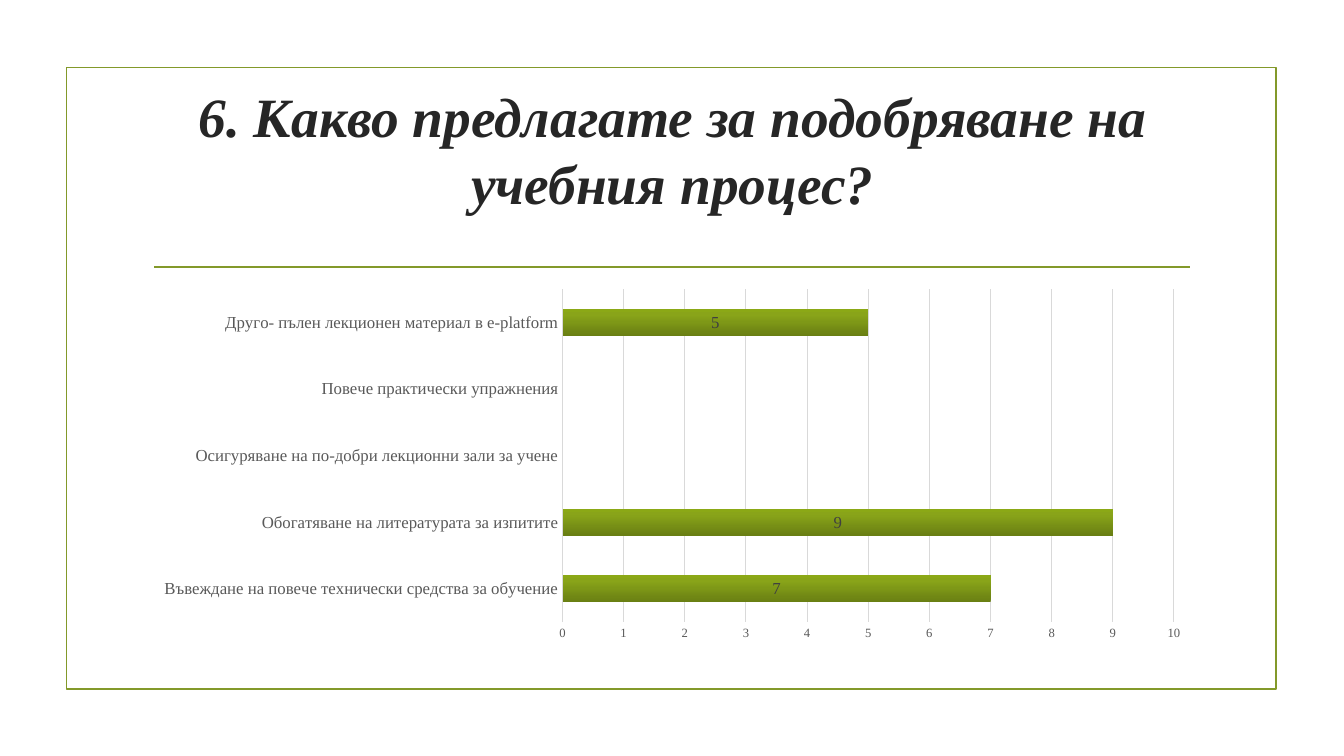
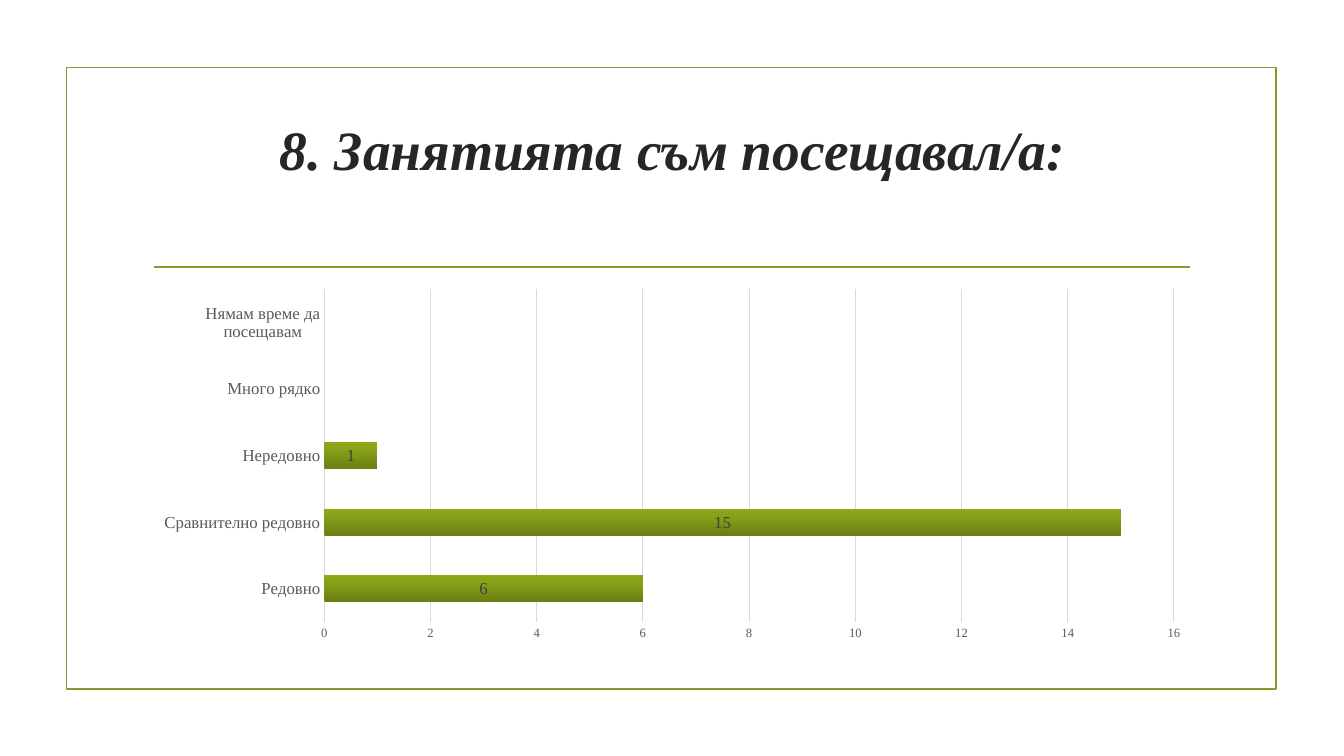
"""Builds two survey slides, each with a framed title and a bar chart."""
from lxml.etree import SubElement
from pptx import Presentation
from pptx.chart.data import CategoryChartData as ChartData
from pptx.dml.color import RGBColor
from pptx.enum.chart import XL_CHART_TYPE as Kind, XL_LABEL_POSITION as Spot
from pptx.enum.chart import XL_TICK_MARK as Tick
from pptx.enum.shapes import MSO_CONNECTOR as Link, MSO_SHAPE as Shape
from pptx.enum.text import MSO_ANCHOR as Anchor, PP_ALIGN as Align
from pptx.oxml import parse_xml
from pptx.oxml.ns import nsdecls, qn
from pptx.util import Cm, Pt

GREEN, GREY, DARK = "83992A", "D9D9D9", "595959"
FADE = {0: "697F13", 80: "89A419", 100: "8BA816"}
HEAD = {"name": "Times New Roman", "size": Pt(39.6), "bold": True, "italic": True}
LEFT, WIDE = Cm(3.61), Cm(26.67)

SLIDES = [
    ("6. Какво предлагате за подобряване на учебния процес?", 10, 1, {
        "Въвеждане на повече технически средства за обучение": 7,
        "Обогатяване на литературата за изпитите": 9,
        "Осигуряване на по-добри лекционни зали за учене": None,
        "Повече практически упражнения": None,
        "Друго- пълен лекционен материал в e-platform": 5}),
    ("8. Занятията съм посещавал/а:", 16, 2, {
        "Редовно": 6,
        "Сравнително редовно": 15,
        "Нередовно": 1,
        "Много рядко": None,
        "Нямам време да посещавам": None}),
]


def paint(part, color, width=None):
    """Colour a font or line, with a width in points for a line."""
    if width:
        part.width = Pt(width)
        part.fill.solid()
        part.fill.fore_color.rgb = RGBColor.from_string(color)
    else:
        part.color.rgb = RGBColor.from_string(color)


def style(font, color, form):
    """Set a font from a dict of format values."""
    for key, value in form.items():
        setattr(font, key, value)
    paint(font, color)


deck = Presentation()
deck.slide_width, deck.slide_height = Cm(33.87), Cm(19.05)
stops = "".join(f'<a:gs pos="{pos * 1000}"><a:srgbClr val="{color}"/></a:gs>'
                for pos, color in FADE.items())
fade = (f'<a:gradFill {nsdecls("a")}><a:gsLst>{stops}</a:gsLst>'
        '<a:lin ang="16200000" scaled="0"/></a:gradFill>')

for title, top, step, votes in SLIDES:
    slide = deck.slides.add_slide(deck.slide_layouts[6])
    shapes = slide.shapes

    frame = shapes.add_shape(Shape.RECTANGLE, Cm(1.68), Cm(1.7), Cm(30.48), Cm(15.67))
    frame.shadow.inherit = False
    frame.fill.background()
    paint(frame.line, GREEN, 1.25)

    rule = shapes.add_connector(Link.STRAIGHT, Cm(3.89), Cm(6.73), Cm(30), Cm(6.73))
    paint(rule.line, GREEN, 1.25)
    SubElement(rule._element.spPr, qn("a:effectLst"))

    text = shapes.add_textbox(LEFT, Cm(1.93), WIDE, Cm(3.63)).text_frame
    text.word_wrap = True
    text.vertical_anchor = Anchor.MIDDLE
    para = text.paragraphs[0]
    para.alignment = Align.CENTER
    run = para.add_run()
    run.text = title
    style(run.font, "262626", HEAD)

    data = ChartData()
    data.categories = list(votes)
    data.add_series("Series 1", list(votes.values()))
    chart = shapes.add_chart(Kind.BAR_STACKED, LEFT, Cm(7.11), WIDE, Cm(9.22), data).chart
    chart.has_legend = chart.has_title = False
    body = {"name": HEAD["name"], "size": Pt(10)}
    style(chart.font, "000000", body)

    names, scale = chart.category_axis, chart.value_axis
    for axis, size in (names, 12), (scale, 9):
        axis.major_tick_mark = axis.minor_tick_mark = Tick.NONE
        style(axis.tick_labels.font, DARK, body | {"size": Pt(size)})
    paint(names.format.line, GREY, 1)
    scale.format.line.fill.background()
    paint(scale.major_gridlines.format.line, GREY, 0.75)
    scale.minimum_scale, scale.maximum_scale, scale.major_unit = 0, top, step

    plot = chart.plots[0]
    plot.gap_width, plot.overlap, plot.vary_by_categories = 150, 100, False
    bars = plot.series[0]
    bars._element.get_or_add_spPr().append(parse_xml(fade))
    labels = bars.data_labels
    labels.show_value = True
    labels.position = Spot.CENTER
    style(labels.font, "404040", body | {"size": Pt(12)})

deck.save("out.pptx")
